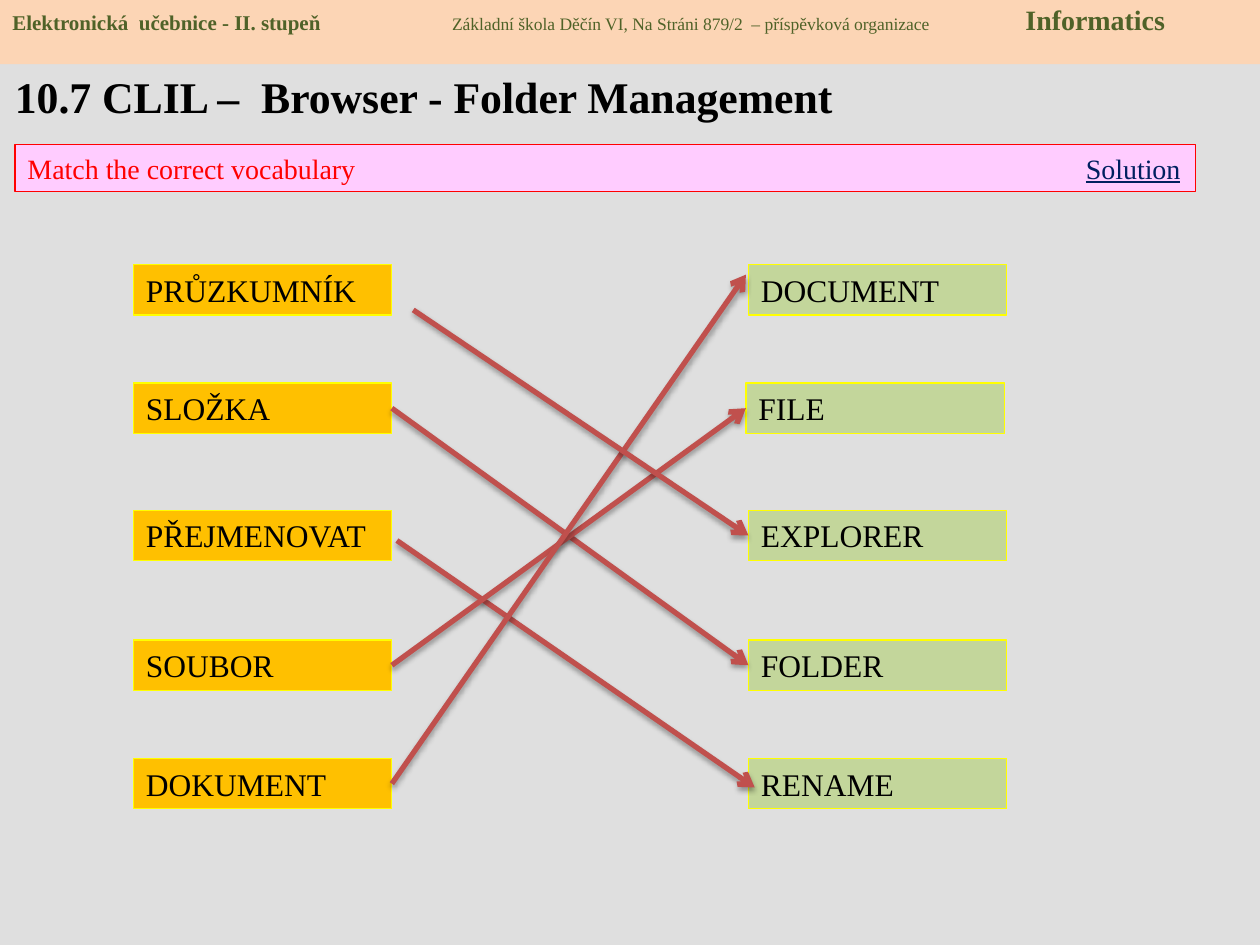
from lxml.etree import SubElement
from pptx import Presentation
from pptx.dml.color import RGBColor
from pptx.enum.shapes import MSO_CONNECTOR, MSO_SHAPE
from pptx.enum.text import MSO_ANCHOR
from pptx.oxml import parse_xml
from pptx.oxml.ns import nsdecls, qn
from pptx.util import Inches, Pt

FONT = "Times New Roman"
COLORS = {
    "page": "DFDFDF", "header": "FCD5B5", "header_text": "4F6228",
    "task": "FFCCFF", "red": "FF0000", "czech": "FFC000",
    "english": "C3D69B", "border": "FFFF00", "text": "000000",
    "solution": "002060", "arrow": "C0504D",
}
HEADER = [
    ("Elektronická  učebnice - II. stupeň", 12, True),
    ("\tZákladní škola Děčín VI, Na Stráni 879/2  – příspěvková organizace", 10, False),
    ("\tInformatics", 16, True),
]
HEADER_TABS = [3.49, 8.04]
TITLE = "10.7 CLIL –  Browser - Folder Management"
TASK = "Match the correct vocabulary"
SOLUTION = "Solution"

ROW_TOPS = [2.1, 3.04, 4.05, 5.08, 6.02]
CARD_WIDTH, CARD_HEIGHT = 2.05, 0.4
CZECH_LEFT, ENGLISH_LEFT = 1.06, 5.94
CZECH = ["PRŮZKUMNÍK", "SLOŽKA", "PŘEJMENOVAT", "SOUBOR", "DOKUMENT"]
ENGLISH = ["DOCUMENT", "FILE", "EXPLORER", "FOLDER", "RENAME"]
ENGLISH_SHIFT = {"FILE": -0.02}
MATCHES = [
    ("PŘEJMENOVAT", "RENAME", (3.15, 4.29), (5.99, 6.25)),
    ("SLOŽKA", "FOLDER", None, None),
    ("SOUBOR", "FILE", None, None),
    ("DOKUMENT", "DOCUMENT", None, (5.92, 2.18)),
    ("PRŮZKUMNÍK", "EXPLORER", (3.28, 2.46), None),
]
SHADOW = (
    f'<a:effectLst {nsdecls("a")}><a:outerShdw blurRad="40000" dist="23000" '
    'dir="5400000" rotWithShape="0"><a:srgbClr val="000000">'
    '<a:alpha val="35000"/></a:srgbClr></a:outerShdw></a:effectLst>'
)


def color(name):
    return RGBColor.from_string(COLORS[name])


def format_span(span, size, ink, bold=False, underline=False):
    font = span.font
    font.name, font.size, font.bold = FONT, Pt(size), bold
    font.underline = underline
    font.color.rgb = color(ink)


def add_box(page, area, fill, border=None):
    box = page.shapes.add_shape(MSO_SHAPE.RECTANGLE, *map(Inches, area))
    box.shadow.inherit = False
    box.fill.solid()
    box.fill.fore_color.rgb = color(fill)
    if border:
        box.line.color.rgb = color(border)
        box.line.width = Pt(0.75)
    else:
        box.line.fill.background()
    return box


def write(box, text, size, ink, anchor=MSO_ANCHOR.TOP, wrap=True, **style):
    frame = box.text_frame
    frame.text = text
    frame.word_wrap = wrap
    frame.vertical_anchor = anchor
    para = frame.paragraphs[0]
    para.alignment = 1
    format_span(para.runs[0], size, ink, **style)


def add_header(page):
    box = add_box(page, (0, -0.03, 10, 0.54), "header")
    frame = box.text_frame
    frame.vertical_anchor = MSO_ANCHOR.TOP
    para = frame.paragraphs[0]
    para.alignment = 1
    tabs = SubElement(para._p.get_or_add_pPr(), qn("a:tabLst"))
    for stop in HEADER_TABS:
        SubElement(tabs, qn("a:tab"), pos=str(Inches(stop)), algn="l")
    for text, size, bold in HEADER:
        span = para.add_run()
        span.text = text
        format_span(span, size, "header_text", bold)


def add_cards(page, words, left, fill, shifts):
    cards = {}
    for word, top in zip(words, ROW_TOPS):
        area = (left + shifts.get(word, 0), top, CARD_WIDTH, CARD_HEIGHT)
        cards[word] = add_box(page, area, fill, "border")
        write(cards[word], word, 18, "text")
    return cards


def add_arrow(page, source, target, start, end):
    points = [Inches(value) for value in (start or (0, 0)) + (end or (0, 0))]
    arrow = page.shapes.add_connector(MSO_CONNECTOR.STRAIGHT, *points)
    if start is None:
        arrow.begin_connect(source, 3)
    if end is None:
        arrow.end_connect(target, 1)
    arrow.line.color.rgb = color("arrow")
    arrow.line.width = Pt(3)
    SubElement(arrow.line._get_or_add_ln(), qn("a:tailEnd"), type="arrow")
    arrow._element.spPr.append(parse_xml(SHADOW))


def main():
    deck = Presentation()
    deck.slide_width, deck.slide_height = Inches(10), Inches(7.5)
    page = deck.slides.add_slide(deck.slide_layouts[6])
    page.background.fill.solid()
    page.background.fill.fore_color.rgb = color("page")

    title = page.shapes.add_textbox(*map(Inches, (0.02, 0.29, 9, 0.94)))
    write(title, TITLE, 25, "text", MSO_ANCHOR.MIDDLE, bold=True)
    add_header(page)
    task = add_box(page, (0.12, 1.15, 9.37, 0.37), "task", "red")
    write(task, TASK, 16, "red")

    czech = add_cards(page, CZECH, CZECH_LEFT, "czech", {})
    english = add_cards(page, ENGLISH, ENGLISH_LEFT, "english", ENGLISH_SHIFT)
    solution = page.shapes.add_textbox(*map(Inches, (8.52, 1.15, 0.96, 0.37)))
    write(solution, SOLUTION, 16, "solution", wrap=False, underline=True)
    for source, target, start, end in MATCHES:
        add_arrow(page, czech[source], english[target], start, end)
    deck.save("out.pptx")


if __name__ == "__main__":
    main()
